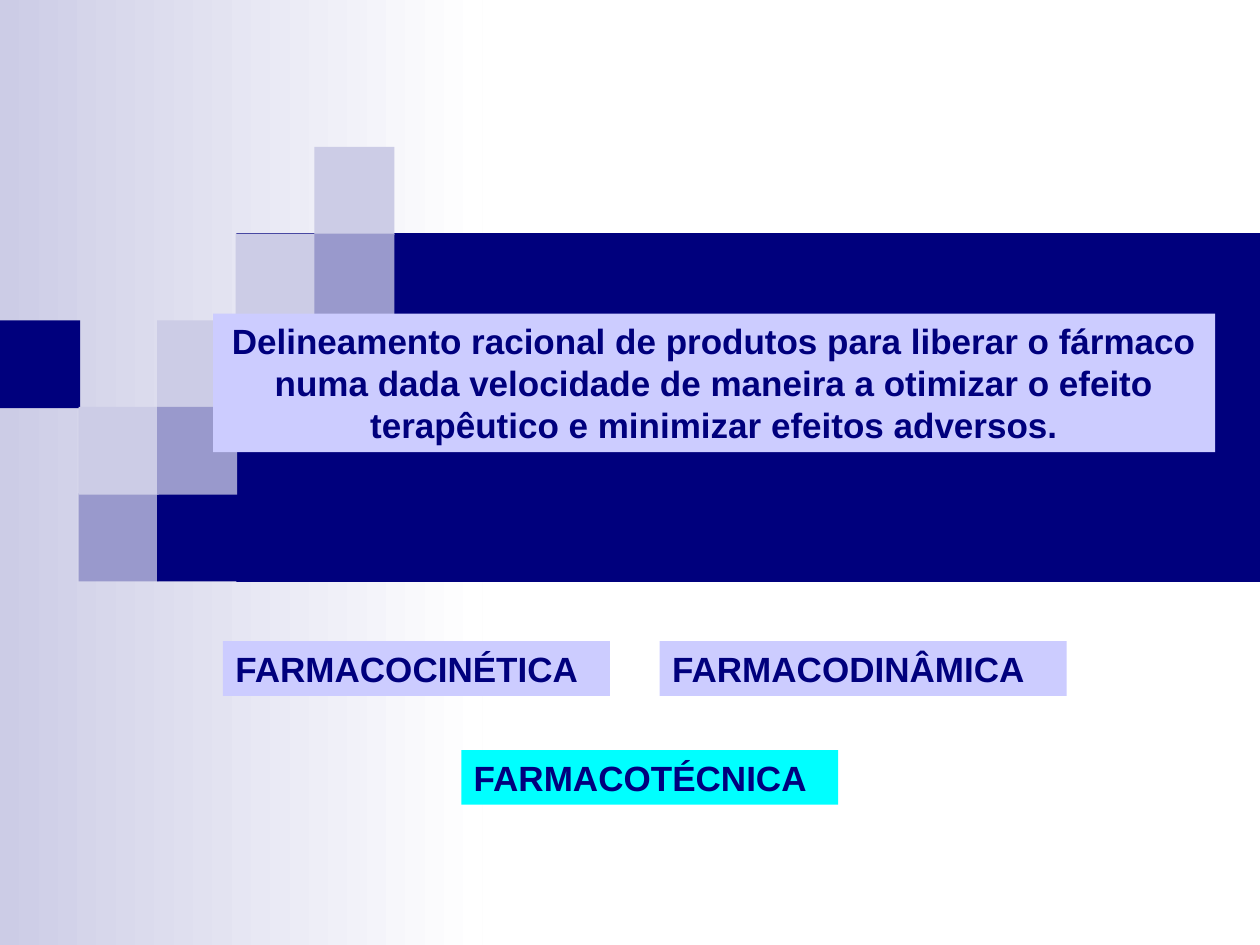
"""Build a slide on the rational design of drug products."""
from pptx import Presentation
from pptx.dml.color import RGBColor
from pptx.enum.shapes import MSO_SHAPE
from pptx.enum.text import MSO_ANCHOR, PP_ALIGN
from pptx.util import Pt

NAVY = RGBColor(0x00, 0x00, 0x7D)
MID = RGBColor(0x99, 0x99, 0xCC)
PALE = RGBColor(0xCC, 0xCC, 0xE6)
LILAC = RGBColor(0xCC, 0xCC, 0xFF)
CYAN = RGBColor(0x00, 0xFF, 0xFF)
WHITE = RGBColor(0xFF, 0xFF, 0xFF)

WIDTH, HEIGHT = 720, 540
FADE = 275.8
COL, ROW, TOP = 44.9, 49.5, 84
TILE_W, TILE_H = 45.8, 50.2
BAND = (135.1, 133.2, 584.9, 199.4)

# column, row, colour
TILES = [
    (1, 4, MID),
    (3, 1, PALE),
    (4, 0, PALE),
    (2, 4, NAVY),
    (4, 1, MID),
    (2, 2, PALE),
    (0, 2, NAVY),
    (1, 3, PALE),
    (2, 3, MID),
]

LABELS = [
    ("Delineamento racional de produtos para liberar o fármaco numa dada "
     "velocidade de maneira a otimizar o efeito terapêutico e minimizar "
     "efeitos adversos.", (121.8, 179.2, 572.6, 79.2), LILAC, PP_ALIGN.CENTER),
    ("FARMACOCINÉTICA", (127.4, 366.4, 221.2, 31.2), LILAC, PP_ALIGN.LEFT),
    ("FARMACODINÂMICA", (377, 366.4, 232.6, 31.2), LILAC, PP_ALIGN.LEFT),
    ("FARMACOTÉCNICA", (263.6, 428.6, 215.4, 31.2), CYAN, PP_ALIGN.LEFT),
]


def add_box(slide, box, color=None):
    shape = slide.shapes.add_shape(MSO_SHAPE.RECTANGLE, *map(Pt, box))
    shape.shadow.inherit = False
    shape.line.fill.background()
    if color is not None:
        shape.fill.solid()
        shape.fill.fore_color.rgb = color
    return shape


def add_fade(slide):
    fill = add_box(slide, (0, 0, FADE, HEIGHT)).fill
    fill.gradient()
    fill.gradient_angle = 0
    for stop, (place, color) in zip(fill.gradient_stops, [(0, PALE), (1, WHITE)]):
        stop.position = place
        stop.color.rgb = color


def add_label(slide, text, box, color, align):
    frame = add_box(slide, box, color).text_frame
    frame.word_wrap = True
    frame.vertical_anchor = MSO_ANCHOR.TOP
    frame.text = text
    line = frame.paragraphs[0]
    line.alignment = align
    font = line.runs[0].font
    font.name, font.size, font.bold = "Arial", Pt(20), True
    font.color.rgb = NAVY


def main():
    deck = Presentation()
    deck.slide_width, deck.slide_height = Pt(WIDTH), Pt(HEIGHT)
    slide = deck.slides.add_slide(deck.slide_layouts[6])
    add_fade(slide)
    add_box(slide, BAND, NAVY)
    for col, row, color in TILES:
        add_box(slide, (col * COL, TOP + row * ROW, TILE_W, TILE_H), color)
    for label in LABELS:
        add_label(slide, *label)
    deck.save("out.pptx")


if __name__ == "__main__":
    main()
